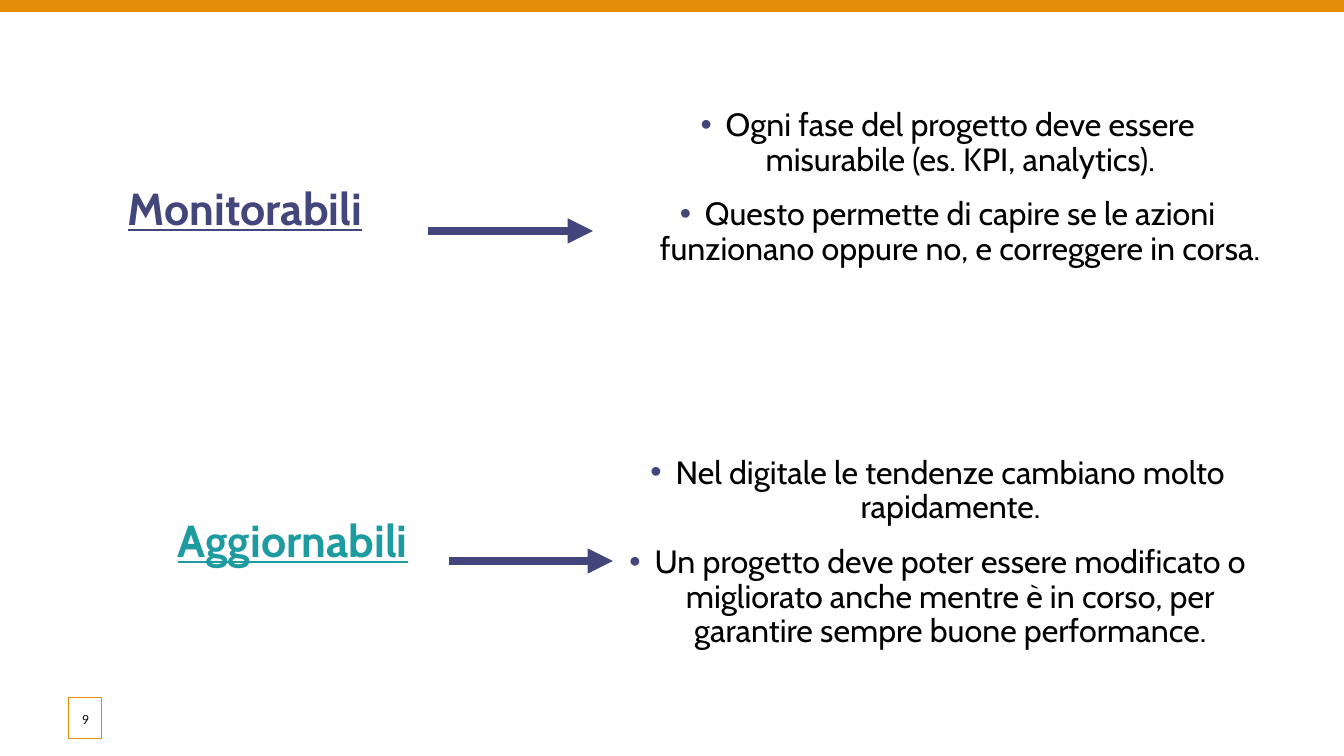
"""Build the slide on monitorable and updatable digital projects."""
from lxml.etree import SubElement
from pptx import Presentation
from pptx.dml.color import RGBColor
from pptx.enum.shapes import MSO_CONNECTOR as CONN, MSO_SHAPE as SHAPE
from pptx.enum.text import MSO_ANCHOR as ANCHOR, PP_ALIGN as ALIGN
from pptx.oxml.ns import qn
from pptx.util import Emu, Inches, Pt

SCALE = 914400 / 100.8
COLORS = {"orange": "E58C09", "indigo": "43467B", "teal": "1D9BA1",
          "black": "000000", "ink": "0D0D0D", "white": "FFFFFF"}


def px(*values):
    return [Emu(round(v * SCALE)) for v in values]


def add_text(tf, lines, size, color, font="Cabin", heading=False, bullets=False,
             align=ALIGN.LEFT, anchor=ANCHOR.TOP, spacing=0.9, after=2):
    tf.word_wrap = True
    tf.vertical_anchor = anchor
    for i, line in enumerate(lines):
        p = tf.add_paragraph() if i else tf.paragraphs[0]
        p.alignment = align
        p.line_spacing = spacing
        p.space_before = Pt(12 if i else 0)
        p.space_after = Pt(after)
        if bullets:
            pPr = p._p.get_or_add_pPr()
            pPr.set("marL", str(Inches(0.25)))
            pPr.set("indent", str(-Inches(0.25)))
            clr = SubElement(pPr, qn("a:buClr"))
            SubElement(clr, qn("a:srgbClr"), val=COLORS["indigo"])
            SubElement(pPr, qn("a:buFont"), typeface="Arial")
            SubElement(pPr, qn("a:buChar"), char="•")
        r = p.add_run()
        r.text = line
        r.font.name = font
        r.font.size = Pt(size)
        r.font.bold = r.font.underline = heading
        r.font.color.rgb = RGBColor.from_string(COLORS[color])


prs = Presentation()
prs.slide_width, prs.slide_height = px(1344, 756)
s = prs.slides.add_slide(prs.slide_layouts[6])

bar = s.shapes.add_shape(SHAPE.RECTANGLE, *px(0, 0, 1344, 12))
bar.shadow.inherit = False
bar.fill.solid()
bar.fill.fore_color.rgb = RGBColor.from_string(COLORS["orange"])
bar.line.fill.background()

rows = [
    ("Monitorabili", "indigo", (118, 182, 383, 118), (623, 134, 650, 108), (428, 593, 231),
     ["Ogni fase del progetto deve essere misurabile (es. KPI, analytics).",
      "Questo permette di capire se le azioni funzionano oppure no, e correggere in corsa."]),
    ("Aggiornabili", "teal", (168, 514, 383, 46), (613, 484, 650, 138), (449, 613, 561),
     ["Nel digitale le tendenze cambiano molto rapidamente.",
      "Un progetto deve poter essere modificato o migliorato anche mentre è in corso, "
      "per garantire sempre buone performance."]),
]
for heading, color, heading_box, points_box, (x1, x2, y), points in rows:
    points_tf = s.shapes.add_textbox(*px(*points_box)).text_frame
    add_text(points_tf, points, 23, "black", bullets=True,
             align=ALIGN.CENTER, anchor=ANCHOR.MIDDLE)
    heading_tf = s.shapes.add_textbox(*px(*heading_box)).text_frame
    add_text(heading_tf, [heading], 32, color, heading=True)

    arrow = s.shapes.add_connector(CONN.STRAIGHT, *px(x1, y, x2, y))
    arrow.line.width = Pt(6)
    arrow.line.color.rgb = RGBColor.from_string(COLORS["indigo"])
    SubElement(arrow.line._get_or_add_ln(), qn("a:tailEnd"), type="triangle")
    SubElement(arrow._element.spPr, qn("a:effectLst"))

number = s.shapes.add_shape(SHAPE.RECTANGLE, *px(69, 698, 33, 41))
number.shadow.inherit = False
number.fill.solid()
number.fill.fore_color.rgb = RGBColor.from_string(COLORS["white"])
white = number._element.spPr.find(qn("a:solidFill"))[0]
SubElement(white, qn("a:alpha"), val="82000")
number.line.color.rgb = RGBColor.from_string(COLORS["orange"])
number.line.width = Pt(0.75)
tf = number.text_frame
tf.margin_left = tf.margin_right = 0
add_text(tf, ["9"], 10, "ink", font="Calibri", align=ALIGN.CENTER,
         anchor=ANCHOR.MIDDLE, spacing=1.0, after=0)

prs.save("out.pptx")
